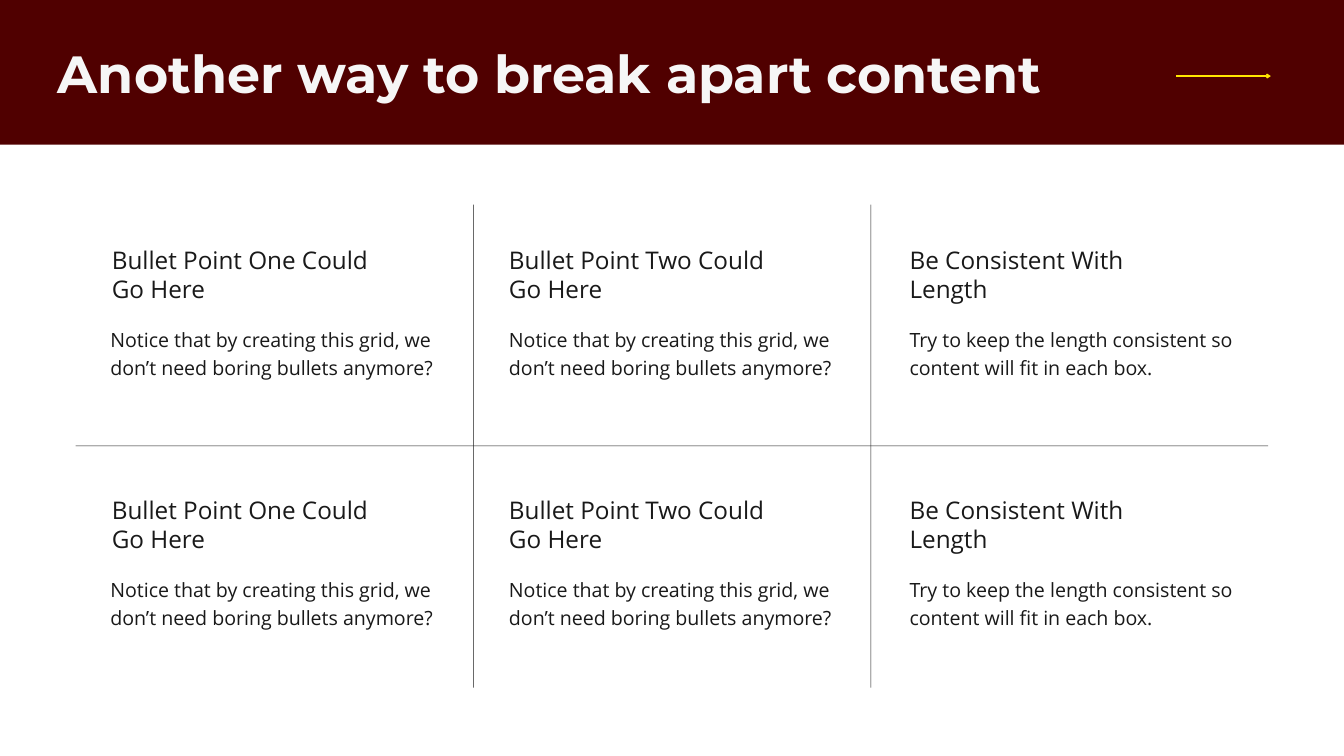
"""Build a slide with a title band and a three-by-two grid of short points."""
from lxml import etree
from pptx import Presentation
from pptx import util as u
from pptx.dml.color import RGBColor
from pptx.enum import shapes, text
from pptx.oxml.ns import qn

MAROON = RGBColor(0x50, 0x00, 0x00)
YELLOW = RGBColor(0xFE, 0xE6, 0x00)
INK = RGBColor(0x19, 0x19, 0x19)
PALE = RGBColor(0xF6, 0xF6, 0xF6)
WHITE = RGBColor(0xFF, 0xFF, 0xFF)

SLIDE_WIDTH, SLIDE_HEIGHT = 1920.24, 1080
RULE = 0.75
GRID_LEFT, GRID_TOP, GRID_WIDTH, GRID_HEIGHT = 108, 292.5, 1704, 690
ROW_TOPS = (350.6, 707.8)
BODY_OFFSET = 112.4
COLUMNS = (
    (159.8, 157.7, "Bullet Point One Could Go Here",
     "Notice that by creating this grid, we don’t need boring bullets anymore?"),
    (727.2, 727.2, "Bullet Point Two Could Go Here",
     "Notice that by creating this grid, we don’t need boring bullets anymore?"),
    (1299.6, 1299.6, "Be Consistent With Length",
     "Try to keep the length consistent so content will fit in each box."),
)


class Deck:
    title_font = "Montserrat"
    body_font = "Open Sans"

    def __init__(self, slide):
        self.slide = slide

    def background(self, color):
        fill = self.slide.background.fill
        fill.solid()
        fill.fore_color.rgb = color

    def group(self):
        return self.slide.shapes.add_group_shape().shapes

    def rectangle(self, parent, left, top, width, height, color):
        shape = parent.add_shape(
            shapes.MSO_SHAPE.RECTANGLE,
            u.Pt(left), u.Pt(top), u.Pt(width), u.Pt(height))
        shape.shadow.inherit = False
        shape.fill.solid()
        shape.fill.fore_color.rgb = color
        shape.line.fill.background()

    def text(self, parent, left, top, width, height, wording, size, spacing,
             color=INK, font=body_font, bold=False):
        box = parent.add_textbox(u.Pt(left), u.Pt(top), u.Pt(width), u.Pt(height))
        frame = box.text_frame
        frame.word_wrap = True
        frame.auto_size = text.MSO_AUTO_SIZE.SHAPE_TO_FIT_TEXT
        frame.margin_left = frame.margin_right = 0
        frame.margin_top = frame.margin_bottom = 0
        paragraph = frame.paragraphs[0]
        paragraph.line_spacing = u.Pt(spacing)
        run = paragraph.add_run()
        run.text = wording
        run.font.name = font
        run.font.size = u.Pt(size)
        run.font.bold = bold
        run.font.color.rgb = color

    def arrow(self, left, right, y, color, width):
        connector = self.slide.shapes.add_connector(
            shapes.MSO_CONNECTOR.STRAIGHT,
            u.Pt(left), u.Pt(y), u.Pt(right), u.Pt(y))
        connector.line.color.rgb = color
        connector.line.width = u.Pt(width)
        properties = connector.element.spPr
        etree.SubElement(properties.find(qn("a:ln")), qn("a:tailEnd"), type="arrow")
        etree.SubElement(properties, qn("a:effectLst"))

    def grid(self):
        group = self.group()
        self.rectangle(group, GRID_LEFT, GRID_TOP + GRID_HEIGHT / 2 - 1,
                       GRID_WIDTH, RULE, INK)
        for column in (1, 2):
            self.rectangle(group, GRID_LEFT + column * GRID_WIDTH / 3, GRID_TOP,
                           RULE, GRID_HEIGHT, INK)

    def point(self, top, heading_left, body_left, heading, body):
        group = self.group()
        self.text(group, body_left, top + BODY_OFFSET, 470, 76.3, body, 28, 39.2)
        self.text(group, heading_left, top, 370, 83.5, heading, 34.7, 41.6)


def main():
    presentation = Presentation()
    presentation.slide_width = u.Pt(SLIDE_WIDTH)
    presentation.slide_height = u.Pt(SLIDE_HEIGHT)
    slide = presentation.slides.add_slide(presentation.slide_layouts[6])
    deck = Deck(slide)
    deck.background(WHITE)
    deck.grid()
    deck.rectangle(slide.shapes, 0, 0, SLIDE_WIDTH, 206.6, MAROON)
    deck.text(slide.shapes, 82.8, 74.2, 1587.6, 75.6,
              "Another way to break apart content", 74.7, 74.7,
              PALE, deck.title_font, True)
    deck.arrow(1680.5, 1815.8, 108.7, YELLOW, 2)
    for top in ROW_TOPS:
        for column in COLUMNS:
            deck.point(top, *column)
    presentation.save("out.pptx")


if __name__ == "__main__":
    main()
